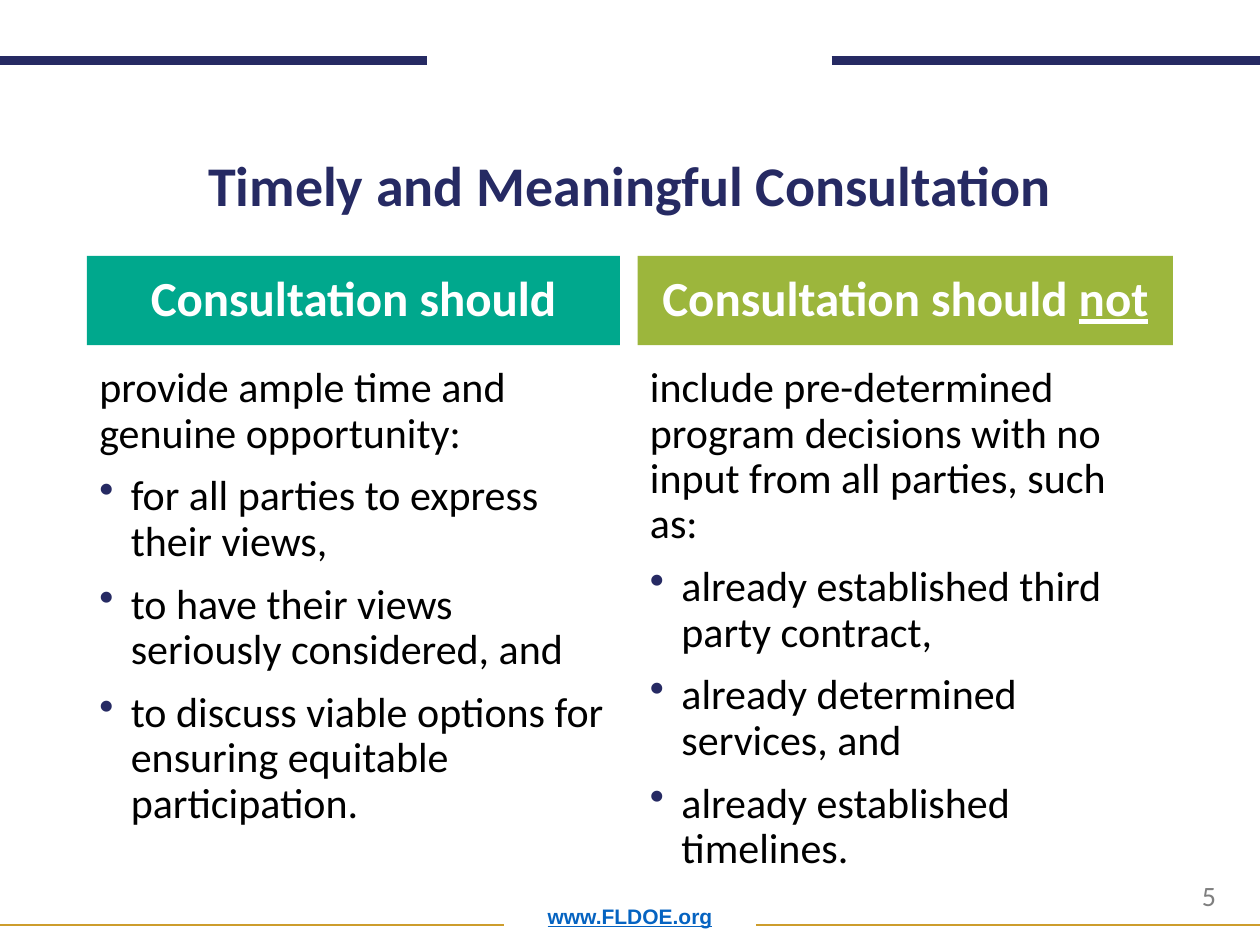
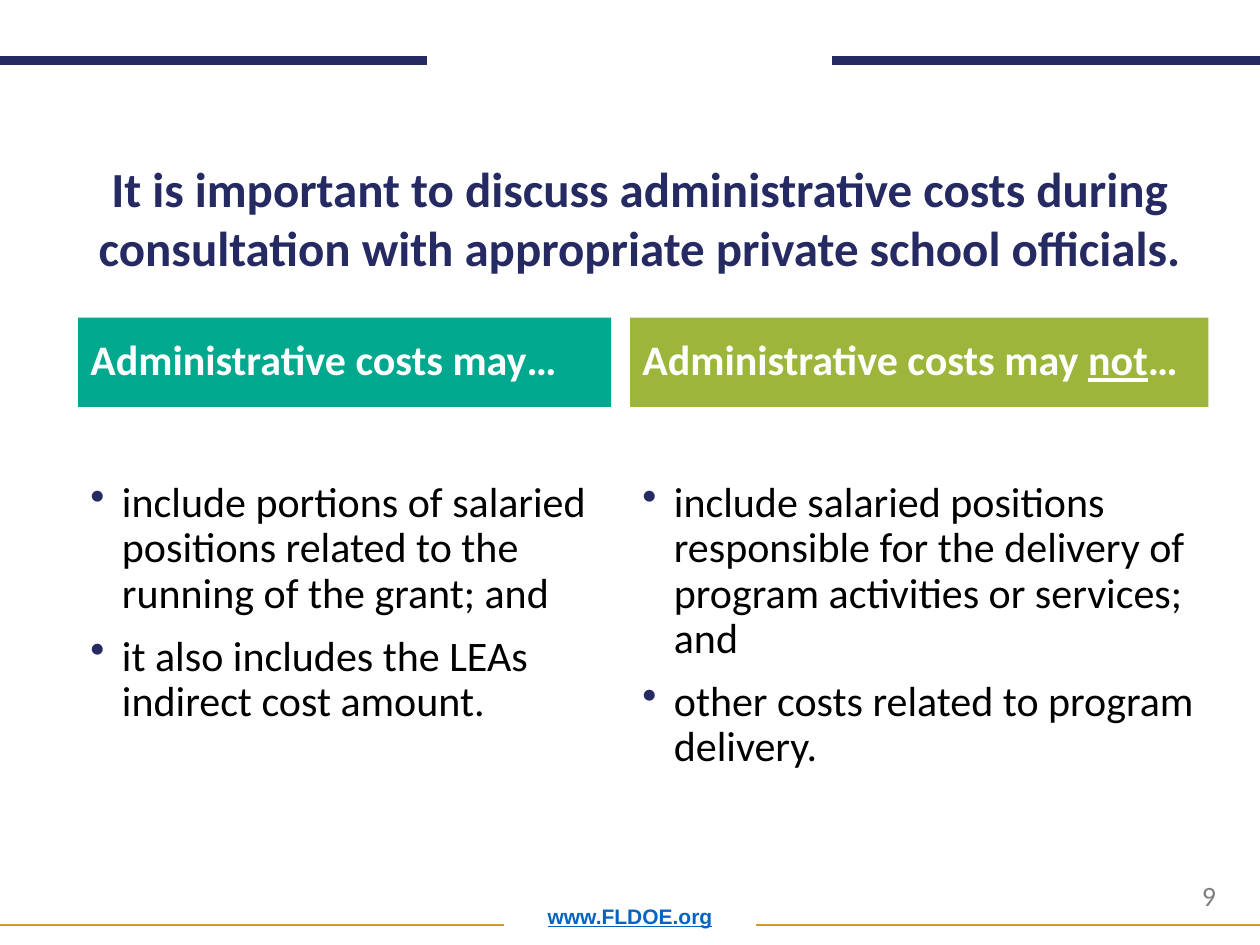
"""Build two comparison slides on consultation with private school officials."""
import dataclasses

import lxml.etree
import pptx
import pptx.dml.color
import pptx.enum.shapes
import pptx.enum.text
import pptx.oxml.ns
import pptx.util

Inches = pptx.util.Inches
Align = pptx.enum.text.PP_ALIGN
Anchor = pptx.enum.text.MSO_ANCHOR


@dataclasses.dataclass(frozen=True)
class Theme:
    font: str = "Calibri"
    link_font: str = "Arial"
    navy: str = "262A63"
    gold: str = "CD9D2C"
    teal: str = "00A88D"
    olive: str = "9CB63C"
    white: str = "FFFFFF"
    black: str = "000000"
    gray: str = "7F7F7F"
    link: str = "0563C1"
    body_size: int = 24
    number_size: int = 16
    link_size: int = 12
    line_spacing: float = 0.9
    paragraph_gap: int = 10


theme = Theme()


def rgb(value):
    return pptx.dml.color.RGBColor.from_string(value)


def write(text_frame, text, *, size=theme.body_size, color=theme.black, font=theme.font,
          bold=False, align=Align.LEFT, anchor=Anchor.TOP, spacing=theme.line_spacing,
          underlined="", bullet=False):
    text_frame.word_wrap = True
    text_frame.auto_size = pptx.enum.text.MSO_AUTO_SIZE.NONE
    text_frame.vertical_anchor = anchor
    paragraph = text_frame.paragraphs[0]
    if paragraph.runs:
        paragraph = text_frame.add_paragraph()
        paragraph.space_before = pptx.util.Pt(theme.paragraph_gap)
    if bullet:
        properties = paragraph._p.get_or_add_pPr()
        properties.set("marL", str(Inches(0.25)))
        properties.set("indent", str(-Inches(0.25)))
        bullet_color = lxml.etree.SubElement(properties, pptx.oxml.ns.qn("a:buClr"))
        lxml.etree.SubElement(bullet_color, pptx.oxml.ns.qn("a:srgbClr"), val=theme.navy)
        lxml.etree.SubElement(properties, pptx.oxml.ns.qn("a:buChar"), char="•")
    paragraph.alignment = align
    paragraph.line_spacing = spacing
    pieces = text.partition(underlined) if underlined else (text,)
    for piece in filter(None, pieces):
        run = paragraph.add_run()
        run.text = piece
        run.font.name = font
        run.font.size = pptx.util.Pt(size)
        run.font.bold = bold
        run.font.underline = piece == underlined
        run.font.color.rgb = rgb(color)


rules = [
    (0, 3.39, 0.48, theme.navy, 5),
    (6.6, 10, 0.48, theme.navy, 5),
    (0, 4, 7.34, theme.gold, 1),
    (6, 10, 7.34, theme.gold, 1),
]

slides = [
    {
        "number": "5",
        "title": "Timely and Meaningful Consultation",
        "title_box": (0.69, 1.06, 8.62, 0.87),
        "title_format": {"size": 32, "anchor": Anchor.MIDDLE},
        "header_top": 2.03,
        "header_format": {"size": 28, "align": Align.CENTER},
        "body_top": 2.86,
        "body_height": 4.06,
        "columns": [
            (0.69, 4.23, theme.teal, "Consultation should", "",
             "provide ample time and genuine opportunity:",
             ["for all parties to express their views,",
              "to have their views seriously considered, and",
              "to discuss viable options for ensuring equitable participation."]),
            (5.06, 4.25, theme.olive, "Consultation should not", "not",
             "include pre-determined program decisions with no input from all parties, such as:",
             ["already established third party contract,",
              "already determined services, and",
              "already established timelines."]),
        ],
    },
    {
        "number": "9",
        "title": "It is important to discuss administrative costs during "
                 "consultation with appropriate private school officials.",
        "title_box": (0.61, 1.21, 8.93, 1.04),
        "title_format": {"size": 28, "spacing": 1.0},
        "header_top": 2.52,
        "header_format": {"size": 24},
        "body_top": 3.77,
        "body_height": 2.75,
        "columns": [
            (0.62, 4.23, theme.teal, "Administrative costs may…", "", "",
             ["include portions of salaried positions related to the running of the grant; and",
              "it also includes the LEAs indirect cost amount."]),
            (5, 4.59, theme.olive, "Administrative costs may not…", "not", "",
             ["include salaried positions responsible for the delivery of program "
              "activities or services; and",
              "other costs related to program delivery."]),
        ],
    },
]

presentation = pptx.Presentation()
presentation.slide_width = Inches(10)
presentation.slide_height = Inches(7.5)

for content in slides:
    slide = presentation.slides.add_slide(presentation.slide_layouts[5])
    shapes = slide.shapes

    title = shapes.title
    title.left, title.top, title.width, title.height = map(Inches, content["title_box"])
    write(title.text_frame, content["title"], color=theme.navy, bold=True,
          align=Align.CENTER, **content["title_format"])

    for start, end, height, color, weight in rules:
        rule = shapes.add_connector(pptx.enum.shapes.MSO_CONNECTOR.STRAIGHT,
                                    Inches(start), Inches(height), Inches(end), Inches(height))
        rule.line.color.rgb = rgb(color)
        rule.line.width = pptx.util.Pt(weight)
        lxml.etree.SubElement(rule._element.spPr, pptx.oxml.ns.qn("a:effectLst"))

    website = shapes.add_textbox(Inches(0.69), Inches(7), Inches(8.62), Inches(0.42))
    write(website.text_frame, "www.FLDOE.org", size=theme.link_size, color=theme.link,
          font=theme.link_font, bold=True, align=Align.CENTER, anchor=Anchor.BOTTOM,
          underlined="www.FLDOE.org")
    number = shapes.add_textbox(Inches(9.44), Inches(6.92), Inches(0.52), Inches(0.37))
    write(number.text_frame, content["number"], size=theme.number_size, color=theme.gray,
          spacing=1.0)

    for left, width, color, heading, underlined, lead, points in content["columns"]:
        header = shapes.add_shape(pptx.enum.shapes.MSO_SHAPE.RECTANGLE, Inches(left),
                                  Inches(content["header_top"]), Inches(width), Inches(0.71))
        header.shadow.inherit = False
        header.fill.solid()
        header.fill.fore_color.rgb = rgb(color)
        header.line.fill.background()
        write(header.text_frame, heading, color=theme.white, bold=True, anchor=Anchor.MIDDLE,
              underlined=underlined, **content["header_format"])

        body = shapes.add_textbox(Inches(left), Inches(content["body_top"]),
                                  Inches(width), Inches(content["body_height"]))
        if lead:
            write(body.text_frame, lead)
        for point in points:
            write(body.text_frame, point, bullet=True)

presentation.save("out.pptx")
